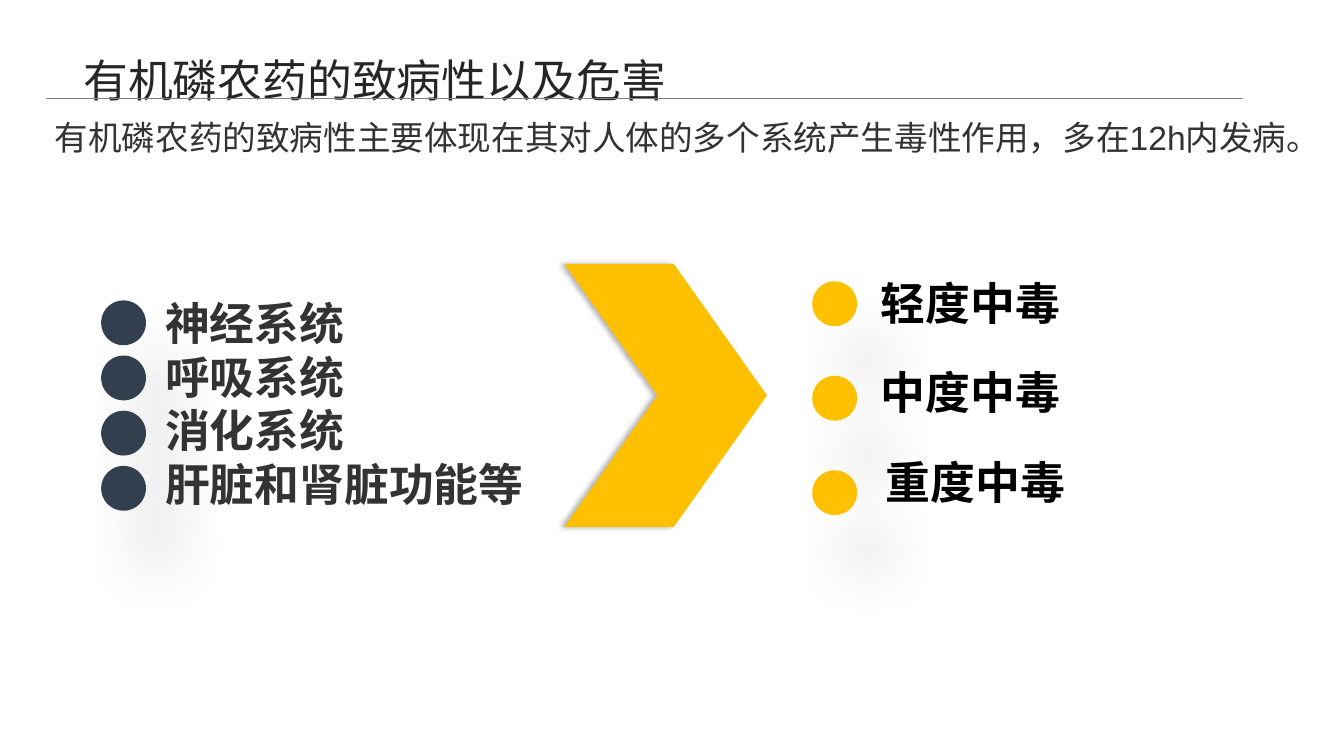
from lxml import etree
from pptx import Presentation
from pptx.dml.color import RGBColor
from pptx.enum.lang import MSO_LANGUAGE_ID
from pptx.enum.shapes import MSO_CONNECTOR, MSO_SHAPE
from pptx.enum.text import MSO_AUTO_SIZE, PP_ALIGN
from pptx.oxml.ns import qn
from pptx.util import Cm, Pt

STRAIGHT = MSO_CONNECTOR.STRAIGHT
CHEVRON, ROUNDED = MSO_SHAPE.CHEVRON, MSO_SHAPE.ROUNDED_RECTANGLE
GROW = MSO_AUTO_SIZE.SHAPE_TO_FIT_TEXT
LEFT, RIGHT = PP_ALIGN.LEFT, PP_ALIGN.RIGHT
CHINESE = MSO_LANGUAGE_ID.SIMPLIFIED_CHINESE

COLORS = {
    "navy": "323F4F",
    "amber": "FFC000",
    "title": "262626",
    "body": "333333",
    "black": "000000",
    "gray": "808080",
}
DOT_SIZE = 1.13
SYSTEMS = ["神经系统", "呼吸系统", "消化系统", "肝脏和肾脏功能等"]
SEVERITIES = [("轻度中毒", 21.95), ("中度中毒", 21.95), ("重度中毒", 22.07)]


class SlideBuilder:
    def __init__(self, slide, colors):
        self.slide = slide
        self.colors = colors

    def rgb(self, color):
        return RGBColor.from_string(self.colors[color])

    def text(self, box, lines, color, size=32, font="Arial", bold=False,
             align=LEFT, spacing=None, inset_y=0.13):
        frame = self.slide.shapes.add_textbox(*map(Cm, box)).text_frame
        frame.word_wrap = True
        frame.auto_size = GROW
        frame.margin_top = frame.margin_bottom = Cm(inset_y)
        for i, line in enumerate(lines):
            paragraph = frame.add_paragraph() if i else frame.paragraphs[0]
            paragraph.alignment = align
            paragraph.line_spacing = spacing
            run = paragraph.add_run()
            run.text = line
            run.font.name = font
            run.font.size = Pt(size)
            run.font.bold = bold
            run.font.language_id = CHINESE
            run.font.color.rgb = self.rgb(color)

    def shape(self, preset, box, color, adjustment):
        shape = self.slide.shapes.add_shape(preset, *map(Cm, box))
        shape.adjustments[0] = adjustment
        shape.fill.solid()
        shape.fill.fore_color.rgb = self.rgb(color)
        shape.line.fill.background()
        shape.shadow.inherit = False
        return shape

    def shadow(self, shape, color, opacity, blur, distance, angle):
        """Cast an outer shadow; blur and distance are in points."""
        effects = shape.element.spPr.find(qn("a:effectLst"))
        outer = etree.SubElement(
            effects, qn("a:outerShdw"), blurRad=str(Pt(blur)),
            dist=str(Pt(distance)), dir=str(angle * 60000), rotWithShape="0")
        tint = etree.SubElement(outer, qn("a:srgbClr"), val=self.colors[color])
        etree.SubElement(tint, qn("a:alpha"), val=str(opacity * 1000))

    def dot(self, left, top, color):
        dot = self.shape(ROUNDED, (left, top, DOT_SIZE, DOT_SIZE), color, 0.5)
        self.shadow(dot, "gray", 23, 40, 47, 60)

    def arrow(self, box, color):
        arrow = self.shape(CHEVRON, box, color, 0.46)
        self.shadow(arrow, "black", 30, 4, 3, 180)

    def rule(self, left, right, y):
        rule = self.slide.shapes.add_connector(
            STRAIGHT, Cm(left), Cm(y), Cm(right), Cm(y))
        rule.line.color.rgb = self.rgb("gray")
        rule.line.width = Pt(0.25)
        etree.SubElement(rule.element.spPr, qn("a:effectLst"))


def main():
    deck = Presentation()
    deck.slide_width, deck.slide_height = Cm(33.87), Cm(19.05)
    page = SlideBuilder(deck.slides.add_slide(deck.slide_layouts[6]), COLORS)

    page.text((-0.41, 2.74, 33.93, 1.12),
              ["有机磷农药的致病性主要体现在其对人体的多个系统产生毒性作用，多在12h内发病。"],
              "body", size=24, align=RIGHT, spacing=1.2, inset_y=0)
    page.text((1.85, 0.94, 15.32, 1.75), ["有机磷农药的致病性以及危害"],
              "title", spacing=1.2)
    page.rule(1.17, 31.32, 2.47)

    for i in range(len(SYSTEMS)):
        page.dot(2.55, 7.57 + 1.39 * i, "navy")
    page.text((3.91, 7.32, 11.15, 5.74), SYSTEMS, "body",
              font="Roboto", bold=True)

    page.arrow((14.22, 6.65, 5.11, 6.63), "amber")

    for i, (severity, left) in enumerate(SEVERITIES):
        page.dot(20.47, 7.09 + 2.38 * i, "amber")
        page.text((left, 6.81 + 2.26 * i, 7.92, 1.63), [severity], "black",
                  bold=True)

    deck.save("out.pptx")


if __name__ == "__main__":
    main()
